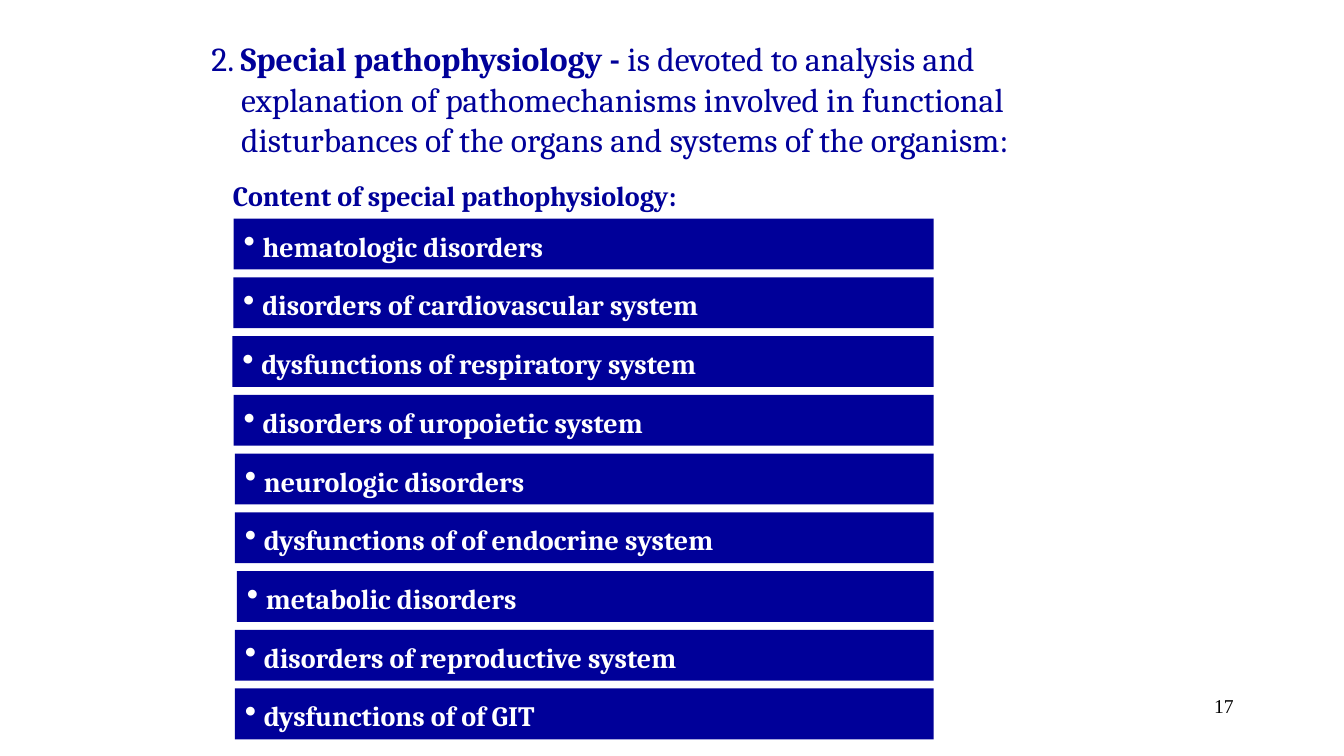
from lxml import etree
from pptx import Presentation
from pptx.dml.color import RGBColor
from pptx.enum import shapes, text
from pptx.oxml import ns
from pptx.util import Cm, Pt

# Content
NAVY, WHITE, BLACK = "000099", "FFFFFF", "000000"
SERIF = "Cambria"
INTRO = [
    ("2. ", False),
    ("Special pathophysiology -", True),
    (" is devoted to analysis and explanation of pathomechanisms involved in "
     "functional disturbances of the organs and systems of the organism:", False),
]
HEADING = "Content of special pathophysiology:"
# Each topic with the left edge of its bar in cm
TOPICS = [
    ("hematologic disorders", 5.89),
    ("disorders of cardiovascular system", 5.88),
    ("dysfunctions of respiratory system", 5.86),
    ("disorders of uropoietic system", 5.89),
    ("neurologic disorders", 5.92),
    ("dysfunctions of of endocrine system", 5.92),
    ("metabolic disorders", 5.97),
    ("disorders of reproductive system", 5.92),
    ("dysfunctions of of GIT", 5.92),
]
PAGE_NUMBER = "17"

# Layout in cm
BARS_TOP, BAR_STEP, BAR_HEIGHT, BARS_RIGHT = 5.51, 1.48, 1.28, 23.53
INTRO_INDENT, BULLET_INDENT = 0.75, 0.48


def color(value):
    return RGBColor.from_string(value)


def style(paragraph, size, ink, bold=None, family=SERIF):
    font = paragraph.font
    font.size, font.name, font.bold = Pt(size), family, bold
    font.color.rgb = color(ink)


def hang(paragraph, indent):
    properties = paragraph._p.get_or_add_pPr()
    properties.set("marL", str(Cm(indent)))
    properties.set("indent", str(-Cm(indent)))
    return properties


def add_box(left, top, width, height, fill=None):
    place = Cm(left), Cm(top), Cm(width), Cm(height)
    if fill is None:
        box = slide.shapes.add_textbox(*place)
    else:
        box = slide.shapes.add_shape(shapes.MSO_SHAPE.RECTANGLE, *place)
        box.shadow.inherit = False
        box.fill.solid()
        box.fill.fore_color.rgb = color(fill)
        box.line.fill.background()
    frame = box.text_frame
    frame.word_wrap = True
    frame.vertical_anchor = text.MSO_ANCHOR.TOP
    frame.paragraphs[0].alignment = text.PP_ALIGN.LEFT
    return frame


deck = Presentation()
deck.slide_width, deck.slide_height = Cm(33.87), Cm(19.05)
slide = deck.slides.add_slide(deck.slide_layouts[6])

# Definition
definition = add_box(5.08, 0.84, 21.72, 3.33).paragraphs[0]
hang(definition, INTRO_INDENT)
style(definition, 24, NAVY)
for words, bold in INTRO:
    run = definition.add_run()
    run.text = words
    run.font.bold = bold

# Heading of the list
heading = add_box(5.62, 4.37, 12.09, 1.12, WHITE).paragraphs[0]
heading.text = HEADING
style(heading, 20, NAVY, True)

# One bar per topic
for row, (topic, left) in enumerate(TOPICS):
    bar = add_box(left, BARS_TOP + row * BAR_STEP, BARS_RIGHT - left, BAR_HEIGHT, NAVY)
    bar.vertical_anchor = text.MSO_ANCHOR.BOTTOM
    bar.margin_bottom = Cm(0.17)
    item = bar.paragraphs[0]
    item.text = topic
    properties = hang(item, BULLET_INDENT)
    etree.SubElement(properties, ns.qn("a:buSzPct")).set("val", "120000")
    etree.SubElement(properties, ns.qn("a:buChar")).set("char", "•")
    style(item, 20, WHITE, True)

# Page number
number = add_box(24.28, 17.35, 7.06, 1.27).paragraphs[0]
number.text = PAGE_NUMBER
number.alignment = text.PP_ALIGN.RIGHT
style(number, 14, BLACK, family="Times New Roman")

deck.save("out.pptx")
